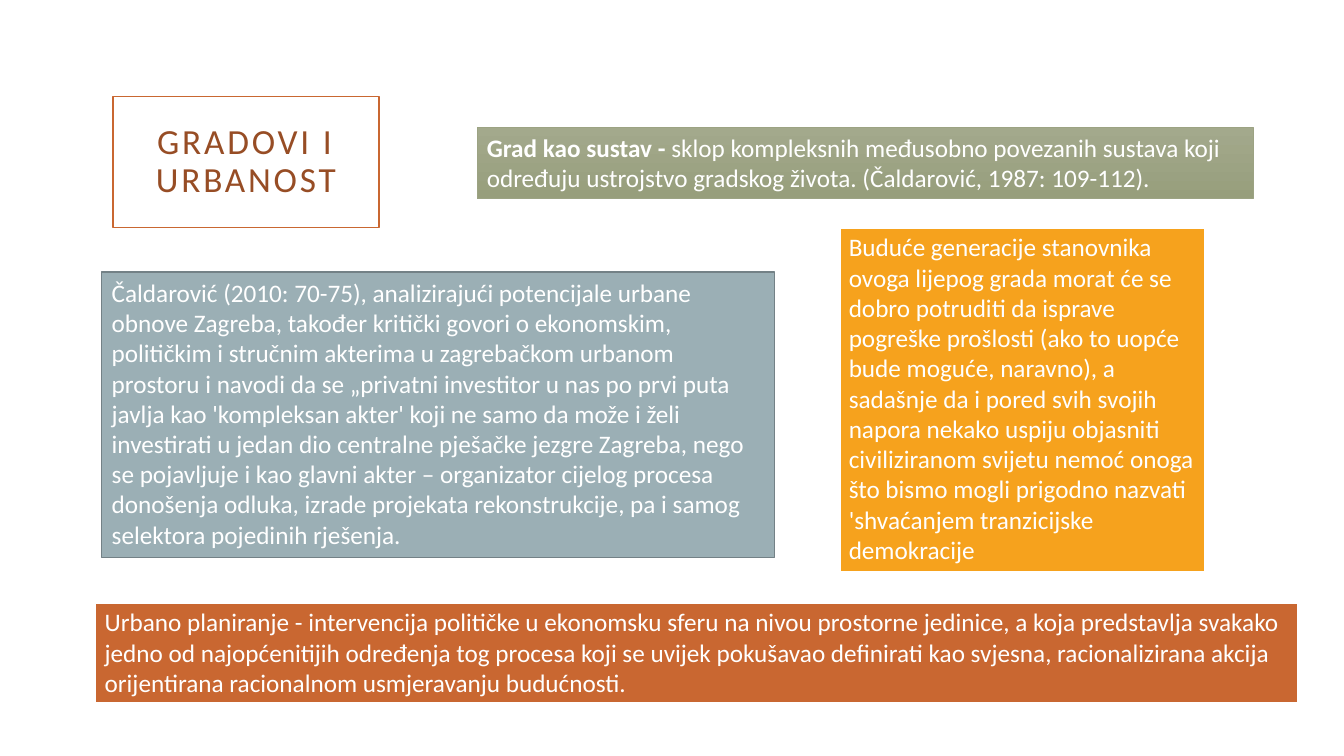
from pptx import Presentation
from pptx.dml.color import RGBColor
from pptx.enum.shapes import MSO_SHAPE
from pptx.enum.text import MSO_ANCHOR, MSO_AUTO_SIZE, PP_ALIGN
from pptx.util import Pt

RECT = MSO_SHAPE.RECTANGLE
MIDDLE, TOP = MSO_ANCHOR.MIDDLE, MSO_ANCHOR.TOP
CENTER, LEFT = PP_ALIGN.CENTER, PP_ALIGN.LEFT
GROW = MSO_AUTO_SIZE.SHAPE_TO_FIT_TEXT
FIXED = MSO_AUTO_SIZE.NONE

PX = 9144
COLORS = {
    "white": "FFFFFF",
    "rust": "C96731",
    "brown": "974D25",
    "sage": "9CA383",
    "sage_light": "A3A98C",
    "sage_dark": "979E7C",
    "slate": "9BAFB5",
    "slate_dark": "738186",
    "amber": "F6A21D",
}

SYSTEM_TERM = "Grad kao sustav - "
SYSTEM_TEXT = (
    "sklop kompleksnih međusobno povezanih sustava koji određuju ustrojstvo "
    "gradskog života. (Čaldarović, 1987: 109-112)."
)
PLANNING_TEXT = (
    "Urbano planiranje - intervencija političke u ekonomsku sferu na nivou "
    "prostorne jedinice, a koja predstavlja svakako jedno od najopćenitijih "
    "određenja tog procesa koji se uvijek pokušavao definirati kao svjesna, "
    "racionalizirana akcija orijentirana racionalnom usmjeravanju budućnosti."
)
RENEWAL_TEXT = (
    "Čaldarović (2010: 70-75), analizirajući potencijale urbane obnove Zagreba, "
    "također kritički govori o ekonomskim, političkim i stručnim akterima u "
    "zagrebačkom urbanom prostoru i navodi da se „privatni investitor u nas po "
    "prvi puta javlja kao 'kompleksan akter' koji ne samo da može i želi "
    "investirati u jedan dio centralne pješačke jezgre Zagreba, nego se pojavljuje "
    "i kao glavni akter – organizator cijelog procesa donošenja odluka, izrade "
    "projekata rekonstrukcije, pa i samog selektora pojedinih rješenja."
)
FUTURE_TEXT = (
    "Buduće generacije stanovnika ovoga lijepog grada morat će se dobro potruditi "
    "da isprave pogreške prošlosti (ako to uopće bude moguće, naravno), a sadašnje "
    "da i pored svih svojih napora nekako uspiju objasniti civiliziranom svijetu "
    "nemoć onoga što bismo mogli prigodno nazvati 'shvaćanjem tranzicijske "
    "demokracije"
)


def rgb(name):
    return RGBColor.from_string(COLORS[name])


def set_attrs(target, values):
    for name, value in values.items():
        setattr(target, name, value)


def add_box(slide, box, fill, line, width):
    sp = slide.shapes.add_shape(RECT, *(v * PX for v in box))
    sp.shadow.inherit = False
    sp.fill.solid()
    sp.fill.fore_color.rgb = rgb(fill)
    sp.line.color.rgb = rgb(line)
    sp.line.width = Pt(width)
    return sp


def set_gradient(sp, start, end):
    sp.fill.gradient()
    sp.fill.gradient_angle = 270
    for stop, name, position in zip(sp.fill.gradient_stops, (start, end), (0, 1)):
        stop.color.rgb = rgb(name)
        stop.position = position


def add_run(p, text, color="white", size=18, bold=False):
    r = p.add_run()
    r.text = text
    set_attrs(r.font, {"name": "Calibri", "size": Pt(size), "bold": bold})
    r.font.color.rgb = rgb(color)
    return r


def add_title(slide, text, box):
    sp = add_box(slide, box, "white", "rust", 1)
    tf = sp.text_frame
    set_attrs(tf, {"word_wrap": True, "auto_size": FIXED, "vertical_anchor": MIDDLE})
    sides = ("left", "top", "right", "bottom")
    set_attrs(tf, {f"margin_{side}": 20 * PX for side in sides})
    p = tf.paragraphs[0]
    set_attrs(p, {"alignment": CENTER, "line_spacing": 0.9})
    r = add_run(p, text, "brown", 25.2)
    r.font._element.set("spc", "200")


def add_text_box(slide, box, fill, line, width, text, term=""):
    sp = add_box(slide, box, fill, line, width)
    tf = sp.text_frame
    set_attrs(tf, {"word_wrap": True, "auto_size": GROW, "vertical_anchor": TOP})
    p = tf.paragraphs[0]
    p.alignment = LEFT
    if term:
        add_run(p, term, bold=True)
    add_run(p, text)
    return sp


def main():
    prs = Presentation()
    set_attrs(prs, {"slide_width": 1333 * PX, "slide_height": 750 * PX})
    slide = prs.slides.add_slide(prs.slide_layouts[6])
    add_title(slide, "GRADOVI I URBANOST", (112, 96, 264, 130))
    system = add_text_box(
        slide, (473, 126, 770, 71), "sage", "sage", 0.5, SYSTEM_TEXT, SYSTEM_TERM
    )
    set_gradient(system, "sage_light", "sage_dark")
    for box, fill, line, width, text in (
        ((94, 597, 1194, 101), "rust", "white", 2.5, PLANNING_TEXT),
        ((101, 270, 667, 283), "slate", "slate_dark", 1, RENEWAL_TEXT),
        ((832, 225, 364, 343), "amber", "white", 2.5, FUTURE_TEXT),
    ):
        add_text_box(slide, box, fill, line, width, text)
    prs.save("out.pptx")


if __name__ == "__main__":
    main()
